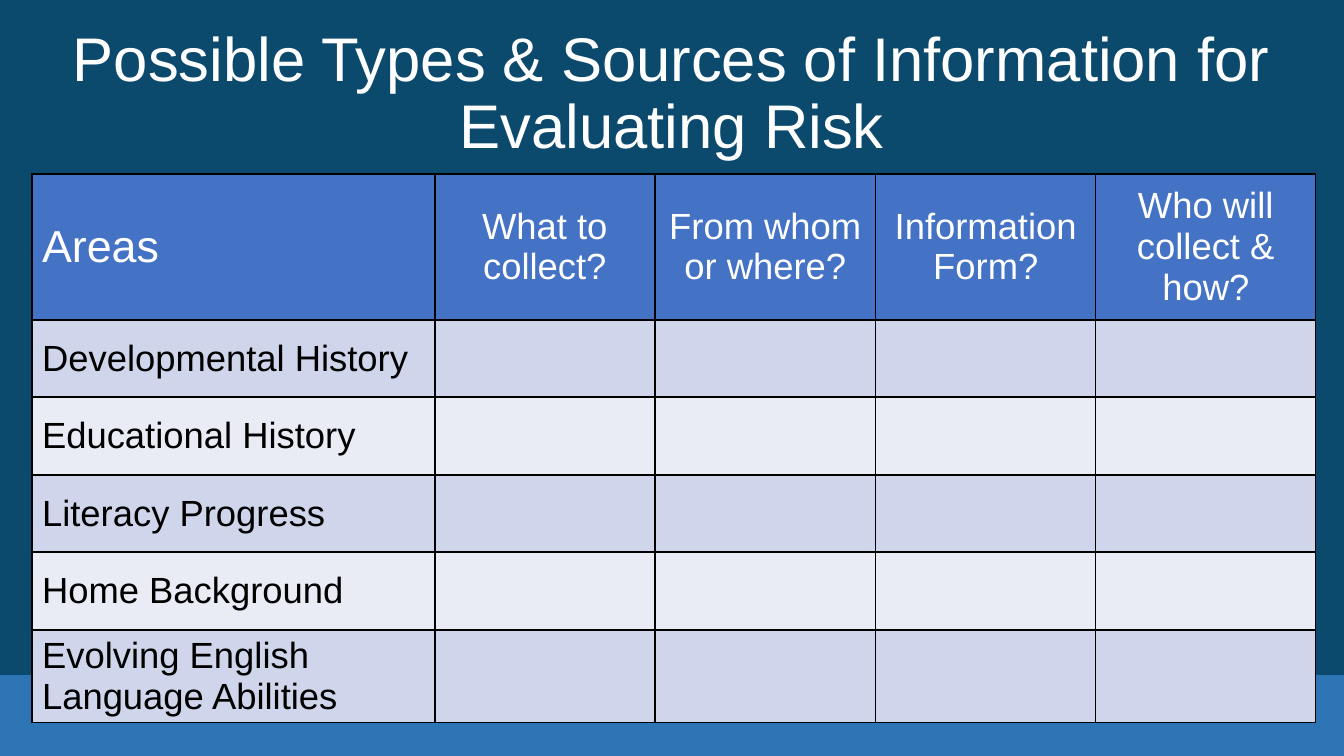
"""Build a slide with an empty planning table for evaluating risk."""
import pptx
import pptx.dml.color
import pptx.enum.shapes
import pptx.enum.text
import pptx.oxml
import pptx.oxml.ns
import pptx.util

SCALE = 914400 / 100.8
ALIGN = pptx.enum.text.PP_ALIGN
MIDDLE = pptx.enum.text.MSO_ANCHOR.MIDDLE


def paint(fill, color):
    fill.solid()
    fill.fore_color.rgb = pptx.dml.color.RGBColor.from_string(color)


def write(frame, text, size=26, color="000000", align=ALIGN.LEFT, space=1.0):
    frame.word_wrap = True
    para = frame.paragraphs[0]
    para.alignment = align
    para.line_spacing = space
    run = para.add_run()
    run.text = text
    run.font.name = "Arial"
    run.font.size = pptx.util.Pt(size)
    paint(run.font.fill, color)


deck = pptx.Presentation()
deck.slide_width, deck.slide_height = [round(n * SCALE) for n in (1344, 756)]
slide = deck.slides.add_slide(deck.slide_layouts[5])
paint(slide.background.fill, "0C4A6D")

place = [round(n * SCALE) for n in (0, 675, 1344, 81)]
band = slide.shapes.add_shape(pptx.enum.shapes.MSO_SHAPE.RECTANGLE, *place)
band.shadow.inherit = False
band.line.fill.background()
paint(band.fill, "2E75B6")

title = slide.shapes.title
title.left, title.top, title.width, title.height = [
    round(n * SCALE) for n in (17, 22, 1310, 146)]
write(title.text_frame, "Possible Types & Sources of Information for Evaluating Risk",
      size=44, color="FFFFFF", align=ALIGN.CENTER, space=0.9)
title.text_frame.auto_size = pptx.enum.text.MSO_AUTO_SIZE.NONE
title.text_frame.vertical_anchor = MIDDLE

heads = ["Areas", "What to collect?", "From whom or where?",
         "Information Form?", "Who will collect & how?"]
areas = ["Developmental History", "Educational History", "Literacy Progress",
         "Home Background", "Evolving English Language Abilities"]
wide = [403, 220, 221, 220, 220]
tall = [146, 77, 78, 77, 78, 93]

place = [round(n * SCALE) for n in (32, 174, sum(wide), sum(tall))]
table = slide.shapes.add_table(len(tall), len(wide), *place).table
for col, width in zip(table.columns, wide):
    col.width = round(width * SCALE)
for row, height in zip(table.rows, tall):
    row.height = round(height * SCALE)

for r in range(len(tall)):
    for c in range(len(wide)):
        cell = table.cell(r, c)
        cell.vertical_anchor = MIDDLE
        if r == 0:
            paint(cell.fill, "4472C4")
            cell.margin_top = cell.margin_bottom = round(10 * SCALE)
            write(cell.text_frame, heads[c], size=26 if c else 32, color="FFFFFF",
                  align=ALIGN.CENTER if c else ALIGN.LEFT)
        else:
            paint(cell.fill, "CFD5EA" if r % 2 else "E9EBF5")
            if c == 0:
                write(cell.text_frame, areas[r - 1])
        props = cell._tc.get_or_add_tcPr()
        for i, side in enumerate("LRTB"):
            props.insert(i, pptx.oxml.parse_xml(
                f'<a:ln{side} {pptx.oxml.ns.nsdecls("a")} w="12700"><a:solidFill>'
                f'<a:srgbClr val="000000"/></a:solidFill></a:ln{side}>'))

deck.save("out.pptx")
